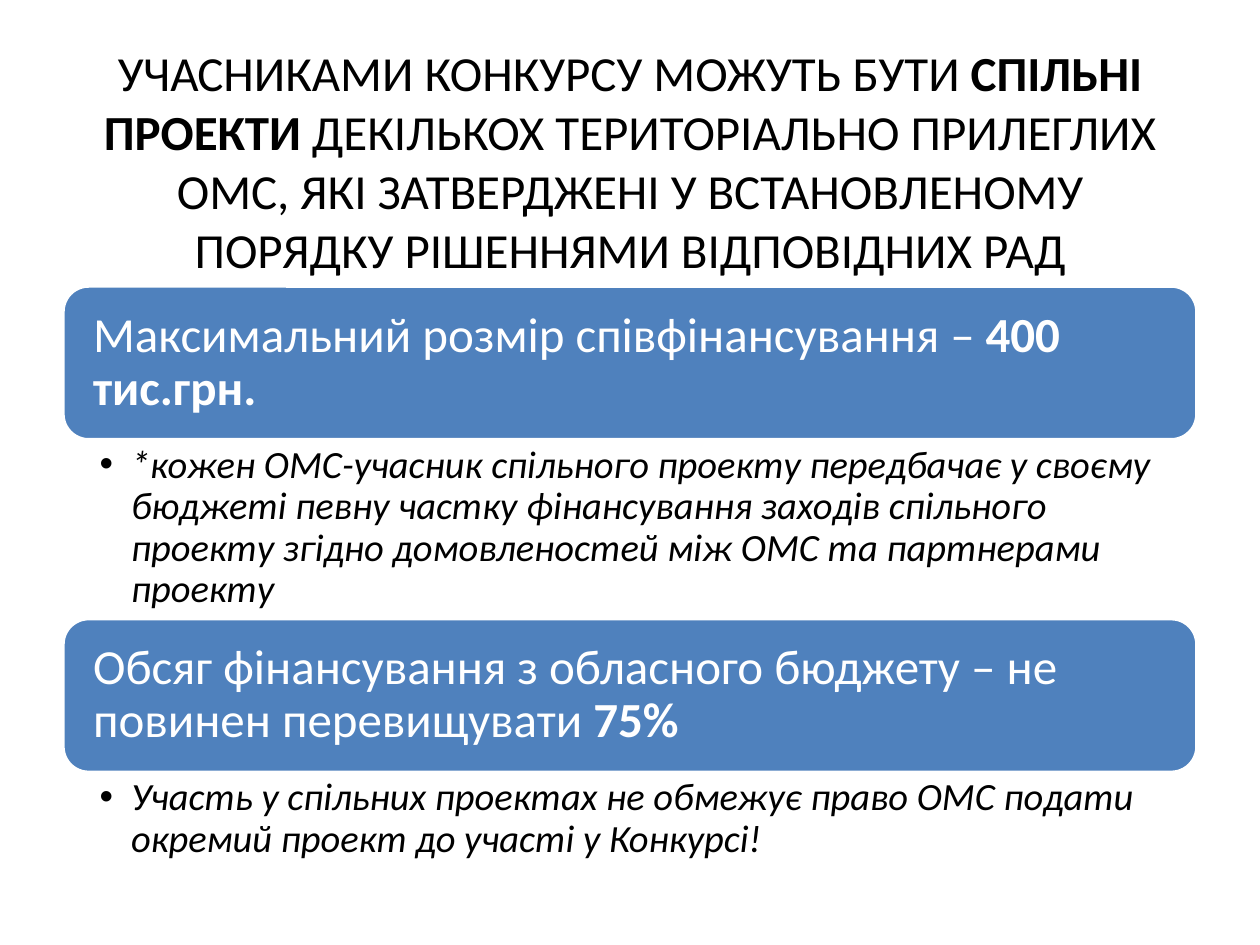
from dataclasses import dataclass

from pptx import Presentation
from pptx.dml.color import RGBColor
from pptx.enum.shapes import MSO_SHAPE
from pptx.enum.text import MSO_ANCHOR, MSO_AUTO_SIZE, PP_ALIGN
from pptx.shapes.base import BaseShape
from pptx.slide import Slide
from pptx.text.text import TextFrame
from pptx.util import Emu, Pt

BLACK = RGBColor(0x00, 0x00, 0x00)
WHITE = RGBColor(0xFF, 0xFF, 0xFF)
BLUE = RGBColor(0x4F, 0x81, 0xBD)

EMU_PER_PX = 9144  # 100 px to the inch
LEFT, WIDTH = 50, 900
BANNER_HEIGHT = 122
BULLET_INDENT = 25

Runs = list[tuple[str, bool]]  # text and whether it is bold


@dataclass(frozen=True)
class Section:
    top: int
    heading: Runs
    note: str
    note_height: int


TITLE: Runs = [
    ("УЧАСНИКАМИ КОНКУРСУ МОЖУТЬ БУТИ ", False),
    ("СПІЛЬНІ ПРОЕКТИ ", True),
    ("ДЕКІЛЬКОХ ТЕРИТОРІАЛЬНО ПРИЛЕГЛИХ ОМС, ЯКІ ЗАТВЕРДЖЕНІ У "
     "ВСТАНОВЛЕНОМУ ПОРЯДКУ РІШЕННЯМИ ВІДПОВІДНИХ РАД", False),
]
SECTIONS = [
    Section(
        227,
        [("Максимальний розмір співфінансування – ", False), ("400 тис.грн.", True)],
        "*кожен ОМС-учасник спільного проекту передбачає у своєму бюджеті певну "
        "частку фінансування заходів спільного проекту згідно домовленостей між "
        "ОМС та партнерами проекту",
        143,
    ),
    Section(
        491,
        [("Обсяг фінансування з обласного бюджету – не повинен перевищувати ", False),
         ("75%", True)],
        "Участь у спільних проектах не обмежує право ОМС подати окремий проект "
        "до участі у Конкурсі!",
        76,
    ),
]


def px(value: int) -> Emu:
    return Emu(value * EMU_PER_PX)


def place(shape: BaseShape, top: int, height: int) -> None:
    box = {"left": LEFT, "top": top, "width": WIDTH, "height": height}
    for name, value in box.items():
        setattr(shape, name, px(value))


def format_frame(frame: TextFrame, anchor: MSO_ANCHOR, left: int, right: int,
                 vertical: int) -> None:
    values = {
        "word_wrap": True,
        "auto_size": MSO_AUTO_SIZE.NONE,
        "vertical_anchor": anchor,
        "margin_left": px(left),
        "margin_right": px(right),
        "margin_top": px(vertical),
        "margin_bottom": px(vertical),
    }
    for name, value in values.items():
        setattr(frame, name, value)


def write(frame: TextFrame, runs: Runs, size: int, color: RGBColor,
          align: PP_ALIGN, line_spacing: float, italic: bool = False) -> None:
    paragraph = frame.paragraphs[0]
    layout = {"alignment": align, "line_spacing": line_spacing,
              "space_before": Pt(0), "space_after": Pt(0)}
    for name, value in layout.items():
        setattr(paragraph, name, value)
    for text, bold in runs:
        run = paragraph.add_run()
        run.text = text
        style = {"name": "Calibri", "size": Pt(size), "bold": bold, "italic": italic}
        for name, value in style.items():
            setattr(run.font, name, value)
        run.font.color.rgb = color


def add_banner(slide: Slide, section: Section) -> None:
    banner = slide.shapes.add_shape(
        MSO_SHAPE.ROUNDED_RECTANGLE,
        px(LEFT), px(section.top), px(WIDTH), px(BANNER_HEIGHT))
    banner.shadow.inherit = False
    banner.fill.solid()
    banner.fill.fore_color.rgb = BLUE
    banner.line.color.rgb = WHITE
    banner.line.width = Pt(2)
    format_frame(banner.text_frame, MSO_ANCHOR.MIDDLE, 18, 18, 12)
    write(banner.text_frame, section.heading, 28, WHITE, PP_ALIGN.LEFT, 0.9)


def fill_note(placeholder: BaseShape, section: Section) -> None:
    place(placeholder, section.top + BANNER_HEIGHT, section.note_height)
    frame = placeholder.text_frame
    format_frame(frame, MSO_ANCHOR.TOP, 29, 22, 4)
    write(frame, [(section.note, False)], 22, BLACK, PP_ALIGN.LEFT, 0.9, italic=True)
    # Hanging indent for the template's bullet
    properties = frame.paragraphs[0]._p.get_or_add_pPr()
    properties.set("marL", str(px(BULLET_INDENT)))
    properties.set("indent", str(-px(BULLET_INDENT)))


def main() -> None:
    presentation = Presentation()
    presentation.slide_width, presentation.slide_height = px(1000), px(750)
    # The "Two Content" layout has a title and two lists
    slide = presentation.slides.add_slide(presentation.slide_layouts[3])

    # Title
    title = slide.shapes.title
    place(title, 30, 195)
    format_frame(title.text_frame, MSO_ANCHOR.MIDDLE, 10, 10, 5)
    write(title.text_frame, TITLE, 28, BLACK, PP_ALIGN.CENTER, 1.0)

    # Banners, each with its note below
    notes = [slide.placeholders[1], slide.placeholders[2]]
    for section, note in zip(SECTIONS, notes):
        add_banner(slide, section)
        fill_note(note, section)

    presentation.save("out.pptx")


if __name__ == "__main__":
    main()
